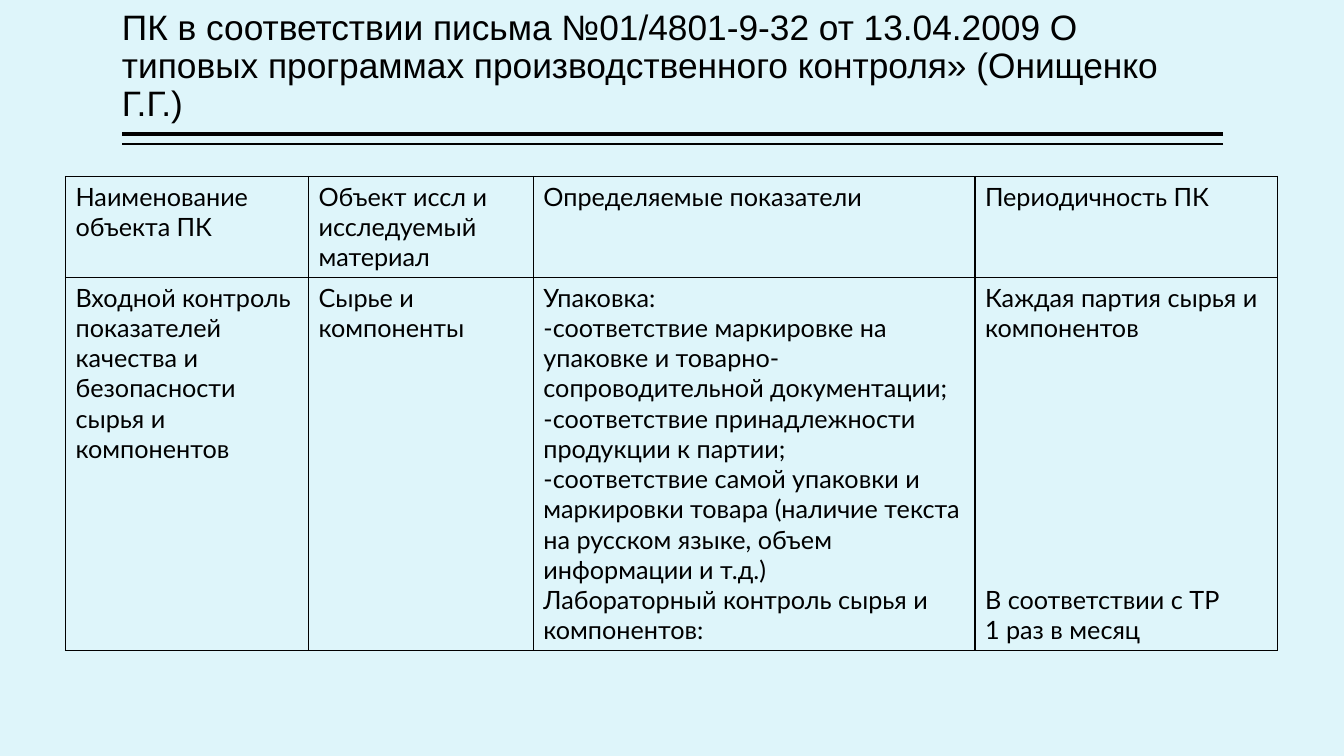
import pptx
import pptx.dml.color
import pptx.enum.shapes
import pptx.enum.text
import pptx.oxml.ns
import pptx.util
from lxml import etree
from pptx.util import Inches

BLACK = "000000"
BACKGROUND = "DEF5FA"
TITLE = ("ПК в соответствии письма №01/4801-9-32 от 13.04.2009 О типовых программах "
         "производственного контроля» (Онищенко Г.Г.)")
COLUMN_WIDTHS = [2.41, 2.23, 4.38, 3]
ROW_HEIGHTS = [1, 3.7]
CONTROL_ROWS = [
    [
        ["Наименование объекта ПК"],
        ["Объект иссл и исследуемый материал"],
        ["Определяемые показатели"],
        ["Периодичность ПК"],
    ],
    [
        ["Входной контроль показателей качества и безопасности сырья и компонентов"],
        ["Сырье и компоненты"],
        [
            "Упаковка:",
            "-соответствие маркировке на упаковке и товарно-сопроводительной документации;",
            "-соответствие принадлежности продукции к партии;",
            "-соответствие самой упаковки и маркировки товара (наличие текста на русском языке, "
            "объем информации и т.д.)",
            "Лабораторный контроль сырья и компонентов:",
        ],
        ["Каждая партия сырья и компонентов", "В соответствии с ТР", "1 раз в месяц"],
    ],
]
LABORATORY_GAP = 172.8


def rgb(value):
    """Turn a hex string into a colour."""
    return pptx.dml.color.RGBColor.from_string(value)


def write_text(frame, paragraphs, size=18, font="Lato", color=BLACK, line_spacing=None):
    """Fill a text frame with left-aligned paragraphs in one format."""
    for index, text in enumerate(paragraphs):
        paragraph = frame.paragraphs[0] if index == 0 else frame.add_paragraph()
        paragraph.alignment = pptx.enum.text.PP_ALIGN.LEFT
        if line_spacing:
            paragraph.line_spacing = line_spacing
        run = paragraph.add_run()
        run.text = text
        run.font.size = pptx.util.Pt(size)
        run.font.name = font
        run.font.color.rgb = rgb(color)


def place_title(slide, text):
    """Move and format the title placeholder."""
    title = slide.shapes.title
    title.left, title.top = Inches(1.21), Inches(0.08)
    title.width, title.height = Inches(10.92), Inches(1.2)
    frame = title.text_frame
    frame.word_wrap = True
    frame.auto_size = pptx.enum.text.MSO_AUTO_SIZE.NONE
    frame.vertical_anchor = pptx.enum.text.MSO_ANCHOR.BOTTOM
    frame.margin_left = frame.margin_right = 0
    frame.margin_top = frame.margin_bottom = Inches(0.05)
    write_text(frame, [text], size=25.2, font="Arial", line_spacing=0.9)


def add_rule(slide, top, weight):
    """Draw a horizontal rule under the title."""
    rule = slide.shapes.add_connector(
        pptx.enum.shapes.MSO_CONNECTOR.STRAIGHT,
        Inches(12.13), Inches(top), Inches(1.21), Inches(top))
    rule.line.color.rgb = rgb(BLACK)
    rule.line.width = pptx.util.Pt(weight)
    etree.SubElement(rule._element.spPr, pptx.oxml.ns.qn("a:effectLst"))


def outline_cell(cell, color=BLACK, weight=1):
    """Clear the fill of a cell and draw its four borders."""
    cell.fill.background()
    properties = cell._tc.get_or_add_tcPr()
    for position, side in enumerate(["lnL", "lnR", "lnT", "lnB"]):
        border = etree.Element(pptx.oxml.ns.qn(f"a:{side}"), w=str(pptx.util.Pt(weight)))
        fill = etree.SubElement(border, pptx.oxml.ns.qn("a:solidFill"))
        etree.SubElement(fill, pptx.oxml.ns.qn("a:srgbClr"), val=color)
        properties.insert(position, border)


def add_control_table(slide, rows):
    """Add the production control table and return it."""
    table = slide.shapes.add_table(
        len(rows), len(COLUMN_WIDTHS), Inches(0.65), Inches(1.75),
        Inches(sum(COLUMN_WIDTHS)), Inches(sum(ROW_HEIGHTS))).table
    table.first_row = table.horz_banding = False
    for column, width in zip(table.columns, COLUMN_WIDTHS):
        column.width = Inches(width)
    for row, height, contents in zip(table.rows, ROW_HEIGHTS, rows):
        row.height = Inches(height)
        for cell, paragraphs in zip(row.cells, contents):
            outline_cell(cell)
            write_text(cell.text_frame, paragraphs)
    return table


def main():
    """Build the slide and save it."""
    presentation = pptx.Presentation()
    presentation.slide_width, presentation.slide_height = Inches(13.33), Inches(7.5)
    slide = presentation.slides.add_slide(presentation.slide_layouts.get_by_name("Title Only"))
    slide.background.fill.solid()
    slide.background.fill.fore_color.rgb = rgb(BACKGROUND)
    add_rule(slide, top=1.33, weight=3)
    add_rule(slide, top=1.43, weight=1)
    place_title(slide, TITLE)
    table = add_control_table(slide, CONTROL_ROWS)
    laboratory_frequency = table.cell(1, 3).text_frame.paragraphs[1]
    laboratory_frequency.space_before = pptx.util.Pt(LABORATORY_GAP)
    presentation.save("out.pptx")


if __name__ == "__main__":
    main()
